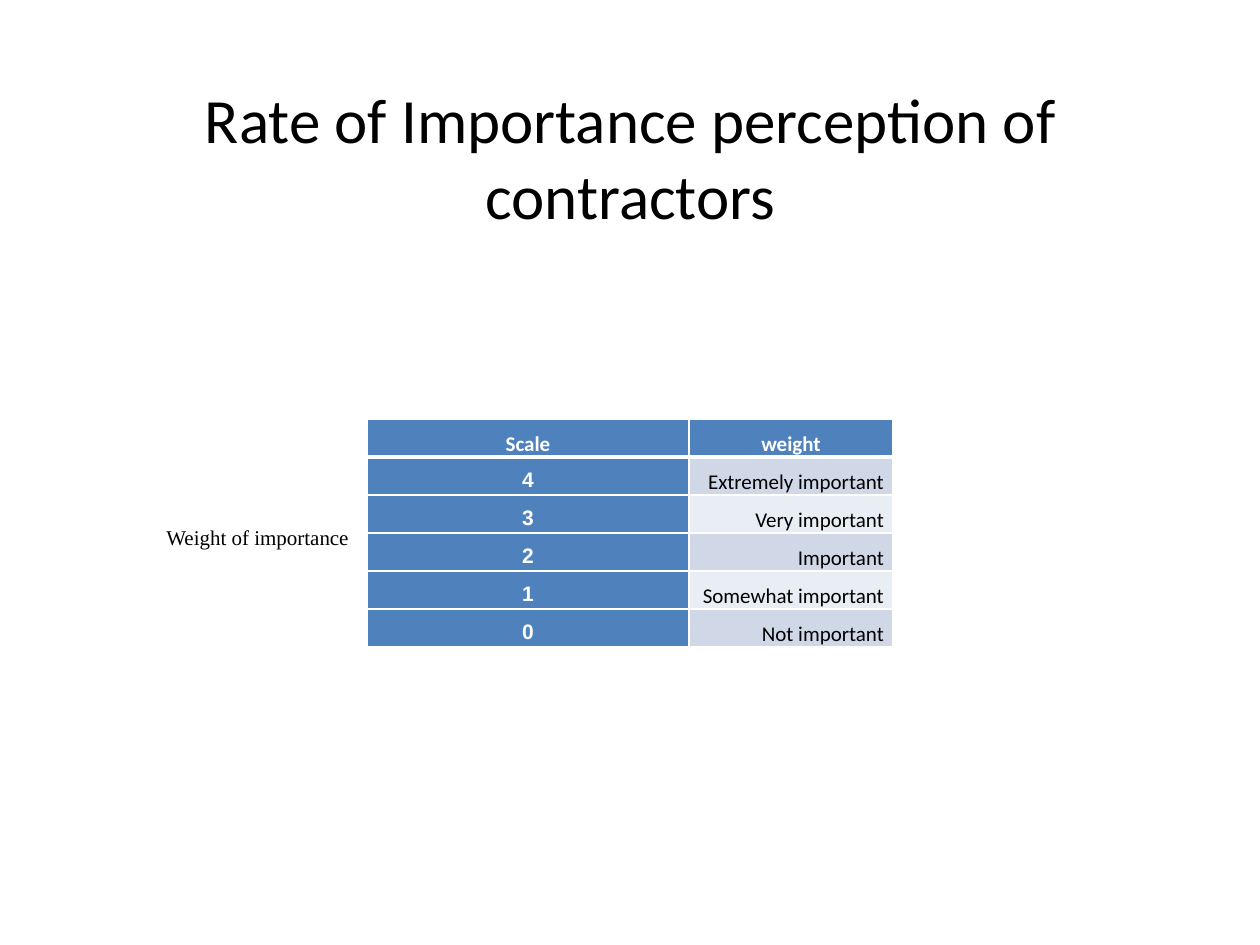
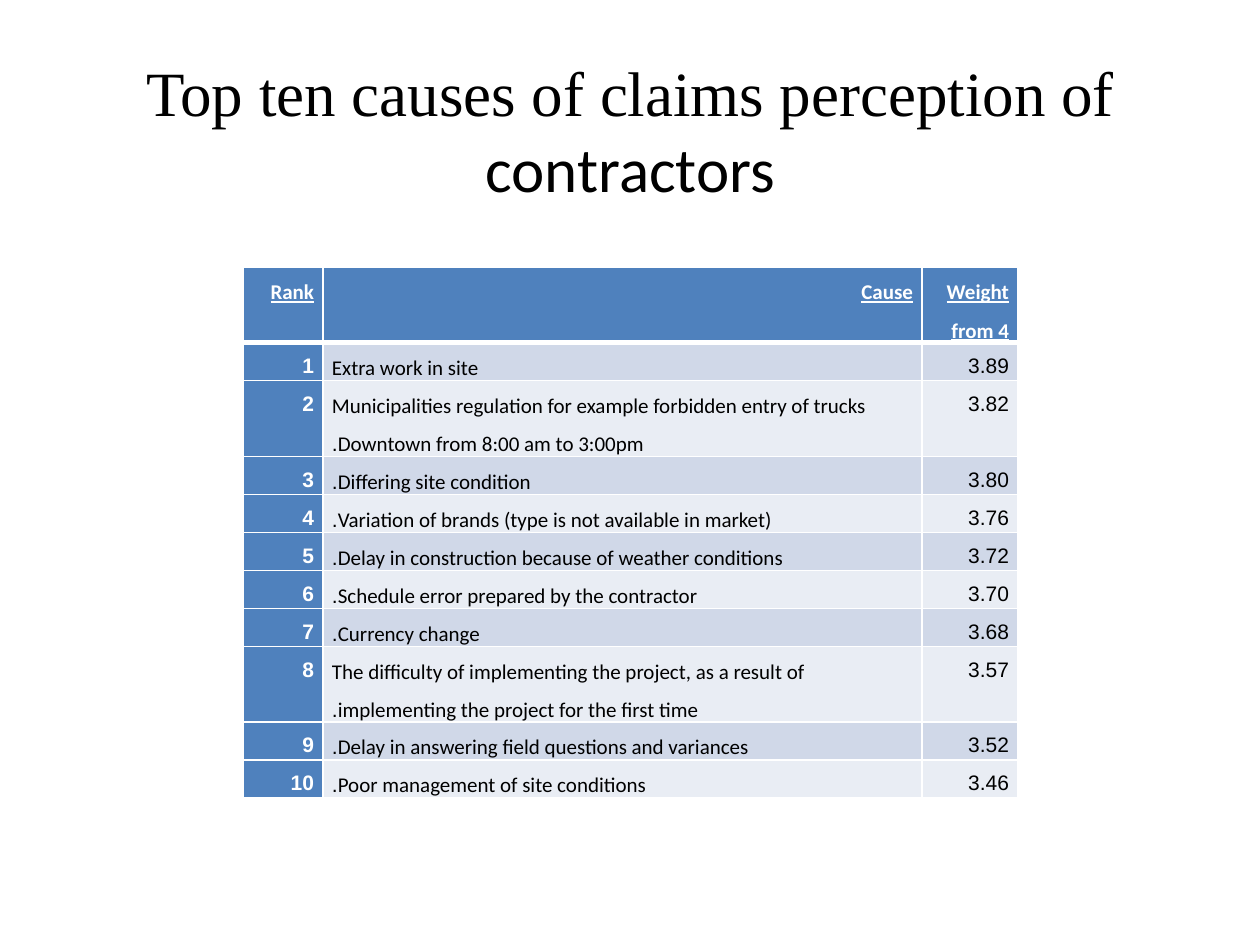
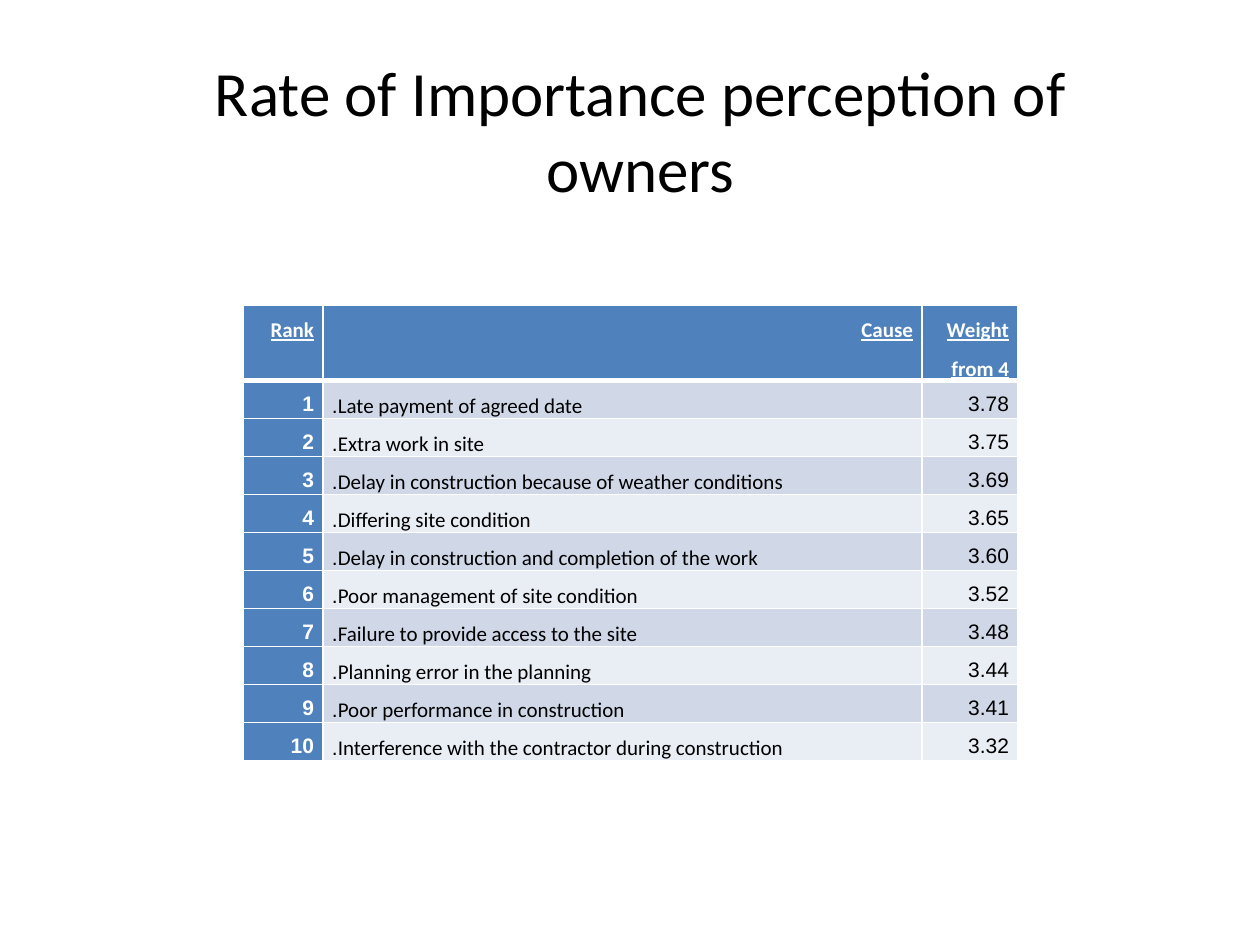
from lxml import etree
from pptx import Presentation
from pptx import util as u
from pptx.dml.color import RGBColor
from pptx.enum import text
from pptx.oxml.ns import qn

PX = 914400 / 126
COLORS = {
    "ink": "000000",
    "paper": "FFFFFF",
    "accent": "4F81BD",
    "band_dark": "D0D8E8",
    "band_light": "E9EDF4",
}
SANS, SERIF, DIGITS = "Calibri", "Times New Roman", "Arial"
LEFT, CENTER, JUSTIFY = (text.PP_ALIGN.LEFT, text.PP_ALIGN.CENTER,
                         text.PP_ALIGN.JUSTIFY)
ROW_HEIGHT = 38

IMPORTANCE = [
    ("Scale", "weight"),
    ("4", "Extremely important"),
    ("3", "Very important"),
    ("2", "Important"),
    ("1", "Somewhat important"),
    ("0", "Not important"),
]
RANKING_HEADER = ("Rank", "Cause", "Weight from 4")
CONTRACTOR_CAUSES = [
    ("Extra work in site", "3.89"),
    ("Municipalities regulation for example forbidden entry of trucks "
     "Downtown from 8:00 am to 3:00pm.", "3.82"),
    ("Differing site condition.", "3.80"),
    ("Variation of brands (type is not available in market).", "3.76"),
    ("Delay in construction because of weather conditions.", "3.72"),
    ("Schedule error prepared by the contractor.", "3.70"),
    ("Currency change.", "3.68"),
    ("The difficulty of implementing the project, as a result of "
     "implementing the project for the first time.", "3.57"),
    ("Delay in answering field questions and variances.", "3.52"),
    ("Poor management of site conditions.", "3.46"),
]
OWNER_CAUSES = [
    ("Late payment of agreed date.", "3.78"),
    ("Extra work in site.", "3.75"),
    ("Delay in construction because of weather conditions.", "3.69"),
    ("Differing site condition.", "3.65"),
    ("Delay in construction and completion of the work.", "3.60"),
    ("Poor management of site condition.", "3.52"),
    ("Failure to provide access to the site.", "3.48"),
    ("Planning error in the planning.", "3.44"),
    ("Poor performance in construction.", "3.41"),
    ("Interference with the contractor during construction.", "3.32"),
]


def px(length):
    return u.Emu(round(length * PX))


def rgb(name):
    return RGBColor.from_string(COLORS[name])


def format_paragraph(paragraph, align, size, fonts=(SANS,), color="ink",
                     bold=False, underline=False):
    """Set right-to-left text; the last font serves any further runs."""
    paragraph.alignment = align
    paragraph._p.get_or_add_pPr().set("rtl", "1")
    for index, run in enumerate(paragraph.runs):
        font = run.font
        font.size, font.bold, font.underline = u.Pt(size), bold, underline
        font.color.rgb = rgb(color)
        font.name = fonts[min(index, len(fonts) - 1)]
        digits = etree.SubElement(run._r.get_or_add_rPr(), qn("a:cs"))
        digits.set("typeface", DIGITS)


def add_label(slide, box, words, align, size, fonts, bottom=6):
    frame = slide.shapes.add_textbox(*map(px, box)).text_frame
    frame.word_wrap = True
    frame.vertical_anchor = text.MSO_ANCHOR.MIDDLE
    frame.margin_bottom = px(bottom)
    frame.text = words
    format_paragraph(frame.paragraphs[0], align, size, fonts)
    return frame


def add_title(slide, box, words, fonts=(SANS,), bottom=6):
    frame = add_label(slide, box, words, CENTER, 36, fonts, bottom)
    frame.margin_left = frame.margin_right = px(15)


def add_borders(cell, bottom_width):
    for side, width in zip("LRTB", (1, 1, 1, bottom_width)):
        line = etree.SubElement(cell._tc.get_or_add_tcPr(),
                                qn(f"a:ln{side}"), w=str(u.Pt(width)))
        fill = etree.SubElement(line, qn("a:solidFill"))
        etree.SubElement(fill, qn("a:srgbClr"), val=COLORS["paper"])


def fill_cell(cell, words, align, color, background, header):
    add_borders(cell, 3 if header else 1)
    cell.fill.solid()
    cell.fill.fore_color.rgb = rgb(background)
    cell.margin_left = cell.margin_right = px(9)
    cell.margin_top = cell.margin_bottom = 0
    cell.text_frame.text = words
    paragraph = cell.text_frame.paragraphs[0]
    paragraph.line_spacing = 1.5
    emphasis = color == "paper"
    format_paragraph(paragraph, align, 12, color=color, bold=emphasis,
                     underline=header and align == JUSTIFY)


def add_banded_table(slide, left, top, widths, rows, header_aligns, aligns):
    """Fill the header row and first column; band the remaining cells."""
    table = slide.shapes.add_table(
        len(rows), len(widths), px(left), px(top),
        px(sum(widths)), px(ROW_HEIGHT * len(rows))).table
    for column, width in zip(table.columns, widths):
        column.width = px(width)
    for r, row in enumerate(rows):
        band = "band_dark" if r % 2 else "band_light"
        for c, words in enumerate(row):
            strong = r == 0 or c == 0
            fill_cell(table.cell(r, c), words,
                      aligns[c] if r else header_aligns[c],
                      "paper" if strong else "ink",
                      "accent" if strong else band, header=r == 0)


def add_ranking(slide, top, causes):
    rows = [RANKING_HEADER]
    rows += [(str(rank), *cause) for rank, cause in enumerate(causes, 1)]
    add_banded_table(slide, 243, top, (80, 599, 96), rows,
                     (JUSTIFY,) * 3, (JUSTIFY, LEFT, JUSTIFY))


def build_importance_slide(slide):
    add_title(slide, (95, 55, 1071, 203),
              "Rate of Importance perception of contractors")
    add_banded_table(slide, 367, 419, (322, 204), IMPORTANCE,
                     (CENTER, CENTER), (CENTER, JUSTIFY))
    add_label(slide, (154, 234, 1052, 645), "Weight of importance",
              LEFT, 12, (SERIF,), bottom=44)


def build_contractor_slide(slide):
    add_title(slide, (95, 55, 1071, 149),
              "Top ten causes of claims perception of\vcontractors",
              (SERIF, SANS))
    add_ranking(slide, 267, CONTRACTOR_CAUSES)


def build_owner_slide(slide):
    add_title(slide, (105, 66, 1071, 203),
              "Rate of Importance perception of owners", bottom=82)
    add_ranking(slide, 305, OWNER_CAUSES)


def main():
    deck = Presentation()
    deck.slide_width, deck.slide_height = px(1260), px(945)
    for build in (build_importance_slide, build_contractor_slide,
                  build_owner_slide):
        build(deck.slides.add_slide(deck.slide_layouts[6]))
    deck.save("out.pptx")


if __name__ == "__main__":
    main()
